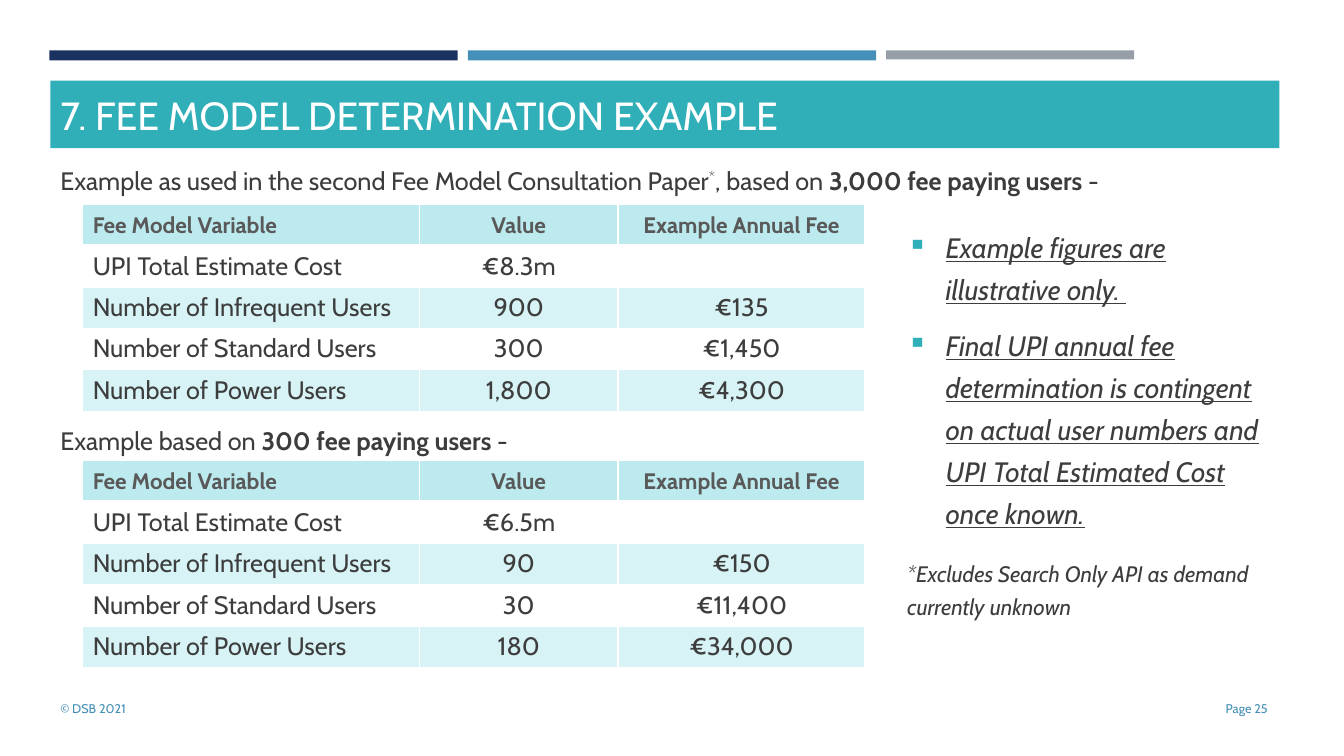
"""Build the fee model determination example slide."""
from dataclasses import dataclass, field
from typing import Any, Optional

from lxml import etree
from pptx import Presentation
from pptx.dml.color import RGBColor
from pptx.enum.shapes import MSO_SHAPE
from pptx.enum.text import MSO_ANCHOR, PP_ALIGN
from pptx.oxml.ns import qn
from pptx.util import Inches, Pt

RECTANGLE = MSO_SHAPE.RECTANGLE
MIDDLE, TOP = MSO_ANCHOR.MIDDLE, MSO_ANCHOR.TOP
LEFT, CENTER, RIGHT = PP_ALIGN.LEFT, PP_ALIGN.CENTER, PP_ALIGN.RIGHT

NAVY = RGBColor(0x1A, 0x32, 0x60)
BLUE = RGBColor(0x45, 0x90, 0xB8)
GREY = RGBColor(0x96, 0x9F, 0xA7)
TEAL = RGBColor(0x30, 0xAF, 0xB8)
WHITE = RGBColor(0xFF, 0xFF, 0xFF)
TEXT = RGBColor(0x3C, 0x3C, 0x3C)
CELL_TEXT = RGBColor(0x3D, 0x3D, 0x3D)
HEADER_TEXT = RGBColor(0x59, 0x59, 0x59)
HEADER_FILL = RGBColor(0xBC, 0xEA, 0xEE)
BAND_FILL = RGBColor(0xD7, 0xF3, 0xF5)

FONT = "Cabin"
COLUMN_WIDTHS = (3.34, 1.97, 2.45)
ROW_HEIGHT = 0.41
TABLE_LEFT = 0.82
BULLET_INDENT = 0.38
HEADER = ("Fee Model Variable", "Value", "Example Annual Fee")
VARIABLES = ("UPI Total Estimate Cost", "Number of Infrequent Users",
             "Number of Standard Users", "Number of Power Users")


@dataclass
class Bar:
    left: float
    top: float
    width: float
    height: float
    color: RGBColor


@dataclass
class Span:
    text: str
    style: dict[str, Any] = field(default_factory=dict)
    superscript: bool = False


@dataclass
class Para:
    spans: list[Span]
    size: float
    color: RGBColor
    style: dict[str, Any] = field(default_factory=dict)
    layout: dict[str, Any] = field(default_factory=dict)
    bullet: bool = False


@dataclass
class TextBlock:
    left: float
    top: float
    width: float
    height: float
    paras: list[Para]


@dataclass
class FeeTable:
    top: float
    values: tuple[str, ...]
    fees: tuple[str, ...]


BOLD = {"bold": True}
ITALIC = {"italic": True}
STRESSED = {"italic": True, "underline": True}
NOTE_LAYOUT = {"line_spacing": 1.25, "space_before": Pt(4.3), "space_after": Pt(6)}
FIRST_LAYOUT = NOTE_LAYOUT | {"space_before": Pt(0)}
LAST_BULLET_LAYOUT = NOTE_LAYOUT | {"space_after": Pt(12)}
INTRO_LAYOUT = {"space_after": Pt(6)}

BARS = [
    Bar(0.49, 0.5, 4.05, 0.1, NAVY),
    Bar(8.79, 0.5, 2.46, 0.09, GREY),
    Bar(4.64, 0.5, 4.05, 0.1, BLUE),
    Bar(0.5, 0.8, 12.19, 0.67, TEAL),
]
TABLES = [
    FeeTable(2.03, ("€8.3m", "900", "300", "1,800"), ("", "€135", "€1,450", "€4,300")),
    FeeTable(4.57, ("€6.5m", "90", "30", "180"), ("", "€150", "€11,400", "€34,000")),
]
TEXT_BLOCKS = [
    TextBlock(0.5, 0.8, 12.19, 0.67, [
        Para([Span("7. FEE MODEL DETERMINATION EXAMPLE")], 28, WHITE)]),
    TextBlock(0.5, 1.51, 12.19, 0.55, [
        Para([Span("Example as used in the second Fee Model Consultation Paper"),
              Span("*", superscript=True), Span(", based on "),
              Span("3,000 fee paying users ", BOLD), Span("-")],
             18, TEXT, layout=INTRO_LAYOUT)]),
    TextBlock(0.5, 4.09, 8.08, 0.55, [
        Para([Span("Example based on "), Span("300 fee paying users ", BOLD), Span("-")],
             18, TEXT, layout=INTRO_LAYOUT)]),
    TextBlock(8.9, 2.03, 3.8, 4.3, [
        Para([Span("Example figures are illustrative only. ")],
             20, CELL_TEXT, STRESSED, FIRST_LAYOUT, bullet=True),
        Para([Span("Final UPI annual fee determination is contingent on actual "
                   "user numbers and UPI Total Estimated Cost once known.")],
             20, CELL_TEXT, STRESSED, LAST_BULLET_LAYOUT, bullet=True),
        Para([Span("*Excludes Search Only API as demand currently unknown")],
             16, CELL_TEXT, ITALIC, NOTE_LAYOUT)]),
    TextBlock(0.5, 6.83, 7.56, 0.4, [Para([Span("© DSB 2021")], 9, BLUE)]),
    TextBlock(11.55, 6.83, 1.15, 0.4, [
        Para([Span("Page 25 ")], 9, BLUE, layout={"alignment": RIGHT})]),
]


def apply(target: Any, values: dict[str, Any]) -> None:
    """Set each named attribute on the target."""
    for name, value in values.items():
        setattr(target, name, value)


def add_bullet(paragraph: Any) -> None:
    """Give a paragraph a hanging teal square bullet."""
    properties = paragraph._p.get_or_add_pPr()
    indent = Inches(BULLET_INDENT)
    properties.set("marL", str(indent))
    properties.set("indent", str(-indent))
    color = etree.SubElement(properties, qn("a:buClr"))
    etree.SubElement(color, qn("a:srgbClr"), val=str(TEAL))
    etree.SubElement(properties, qn("a:buChar"), char="▪")


def write_para(paragraph: Any, para: Para) -> None:
    """Write one described paragraph with its spans."""
    if para.bullet:
        add_bullet(paragraph)
    apply(paragraph, para.layout)
    for span in para.spans:
        run = paragraph.add_run()
        run.text = span.text
        apply(run.font, {"name": FONT, "size": Pt(para.size)} | para.style | span.style)
        run.font.color.rgb = para.color
        if span.superscript:
            run._r.get_or_add_rPr().set("baseline", "30000")


def add_bar(page: Any, bar: Bar) -> None:
    """Draw a plain filled rectangle."""
    shape = page.shapes.add_shape(RECTANGLE, Inches(bar.left), Inches(bar.top),
                                  Inches(bar.width), Inches(bar.height))
    shape.shadow.inherit = False
    shape.fill.solid()
    shape.fill.fore_color.rgb = bar.color
    shape.line.fill.background()


def add_text(page: Any, block: TextBlock) -> None:
    """Draw a wrapped, vertically centred text box."""
    box = page.shapes.add_textbox(Inches(block.left), Inches(block.top),
                                  Inches(block.width), Inches(block.height))
    frame = box.text_frame
    apply(frame, {"word_wrap": True, "vertical_anchor": MIDDLE})
    for index, para in enumerate(block.paras):
        write_para(frame.add_paragraph() if index else frame.paragraphs[0], para)


def style_cell(cell: Any, fill: Optional[RGBColor], bottom_width: float) -> None:
    """Set white borders and the fill of a table cell."""
    properties = cell._tc.get_or_add_tcPr()
    for side, width in (("L", 1), ("R", 1), ("T", 1), ("B", bottom_width)):
        border = etree.SubElement(properties, qn(f"a:ln{side}"), w=str(Pt(width)))
        solid = etree.SubElement(border, qn("a:solidFill"))
        etree.SubElement(solid, qn("a:srgbClr"), val=str(WHITE))
    if fill is None:
        cell.fill.background()
    else:
        cell.fill.solid()
        cell.fill.fore_color.rgb = fill


def add_fee_table(page: Any, spec_table: FeeTable) -> None:
    """Draw a fee table with a header and banded rows."""
    rows = [HEADER, *zip(VARIABLES, spec_table.values, spec_table.fees)]
    table = page.shapes.add_table(
        len(rows), len(HEADER), Inches(TABLE_LEFT), Inches(spec_table.top),
        Inches(sum(COLUMN_WIDTHS)), Inches(ROW_HEIGHT * len(rows))).table
    for column, width in zip(table.columns, COLUMN_WIDTHS):
        column.width = Inches(width)
    for row_index, texts in enumerate(rows):
        table.rows[row_index].height = Inches(ROW_HEIGHT)
        is_header = row_index == 0
        band = None if row_index % 2 else BAND_FILL
        size, color = (16, HEADER_TEXT) if is_header else (18, CELL_TEXT)
        for column_index, text in enumerate(texts):
            cell = table.cell(row_index, column_index)
            style_cell(cell, HEADER_FILL if is_header else band, 3 if is_header else 1)
            cell.vertical_anchor = MIDDLE if is_header else TOP
            layout = {"alignment": CENTER if column_index else LEFT}
            spans = [Span(text)] if text else []
            write_para(cell.text_frame.paragraphs[0],
                       Para(spans, size, color, {"bold": is_header}, layout))


def main() -> None:
    """Create the deck and save it."""
    deck = Presentation()
    apply(deck, {"slide_width": Inches(13.33), "slide_height": Inches(7.5)})
    page = deck.slides.add_slide(deck.slide_layouts[6])
    for bar in BARS:
        add_bar(page, bar)
    for fee_table in TABLES:
        add_fee_table(page, fee_table)
    for block in TEXT_BLOCKS:
        add_text(page, block)
    deck.save("out.pptx")


if __name__ == "__main__":
    main()
